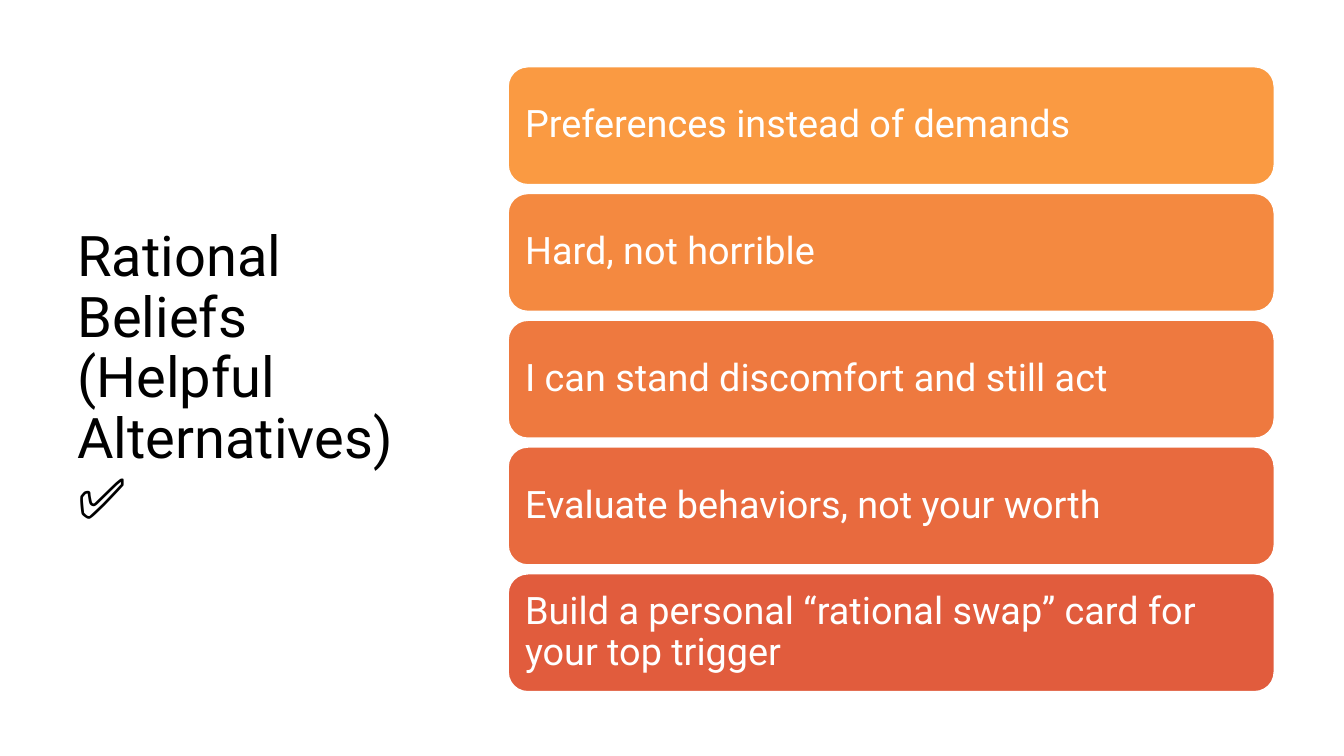
"""Build a slide that lists rational beliefs as stacked cards."""
from pptx import Presentation
from pptx.dml.color import RGBColor
from pptx.enum.shapes import MSO_SHAPE
from pptx.enum.text import MSO_ANCHOR, MSO_AUTO_SIZE, PP_ALIGN
from pptx.util import Pt

FONT = "Roboto"
COLORS = {
    "title": "000000",
    "white": "FFFFFF",
    "amber": "FA9A42",
    "orange": "F48940",
    "rust": "EE793F",
    "coral": "E86A3E",
    "red": "E15C3D",
}
CARDS = [
    ("Preferences instead of demands", "amber"),
    ("Hard, not horrible", "orange"),
    ("I can stand discomfort and still act", "rust"),
    ("Evaluate behaviors, not your worth", "coral"),
    ("Build a personal “rational swap” card for your top trigger", "red"),
]
LEFT, TOP, WIDTH, HEIGHT = 363, 47.7, 547.2, 84.2
STEP = 90.55


def get_color(name):
    return RGBColor.from_string(COLORS[name])


def add_text(shape, text, size, color):
    frame = shape.text_frame
    frame.word_wrap = True
    frame.auto_size = MSO_AUTO_SIZE.NONE
    frame.vertical_anchor = MSO_ANCHOR.MIDDLE
    para = frame.paragraphs[0]
    para.alignment = PP_ALIGN.LEFT
    para.line_spacing = 0.9
    run = para.add_run()
    run.text = text
    run.font.name = FONT
    run.font.size = Pt(size)
    run.font.color.rgb = get_color(color)


def set_title(slide, text):
    title = slide.shapes.title
    title.left, title.top = Pt(48.2), Pt(43.2)
    title.width, title.height = Pt(275), Pt(455.8)
    add_text(title, text, 40, "title")


def add_card(slide, top, text, fill):
    card = slide.shapes.add_shape(
        MSO_SHAPE.ROUNDED_RECTANGLE, Pt(LEFT), Pt(top), Pt(WIDTH), Pt(HEIGHT)
    )
    card.shadow.inherit = False
    card.fill.solid()
    card.fill.fore_color.rgb = get_color(fill)
    card.line.color.rgb = get_color("white")
    card.line.width = Pt(1)
    frame = card.text_frame
    frame.margin_left = frame.margin_right = Pt(8)
    frame.margin_top = frame.margin_bottom = Pt(8)
    add_text(card, text, 27, "white")


def main():
    deck = Presentation()
    deck.slide_width, deck.slide_height = Pt(960), Pt(540)
    slide = deck.slides.add_slide(deck.slide_layouts[5])
    set_title(slide, "Rational Beliefs (Helpful Alternatives) ✅")
    for row, (text, fill) in enumerate(CARDS):
        add_card(slide, TOP + row * STEP, text, fill)
    deck.save("out.pptx")


if __name__ == "__main__":
    main()
